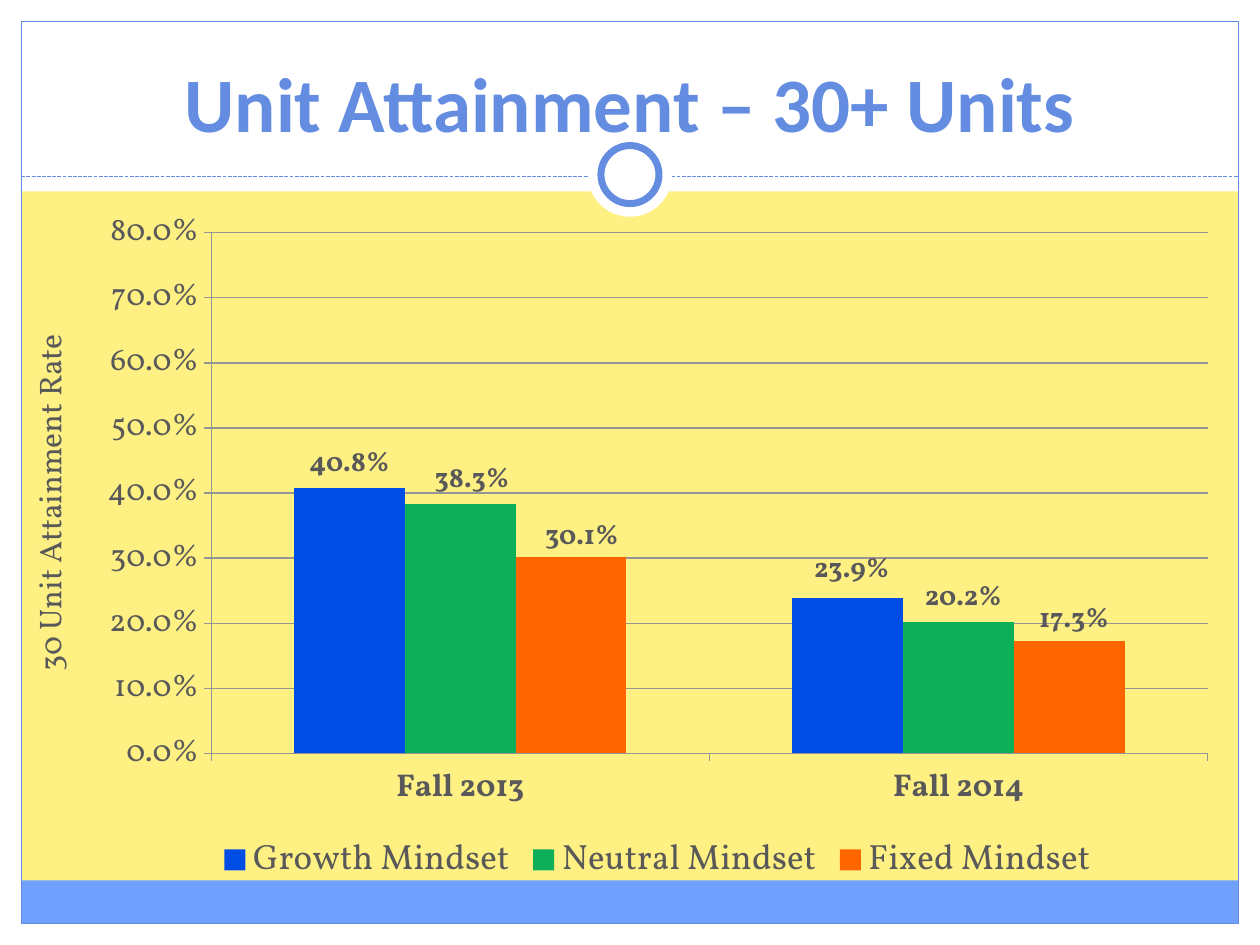
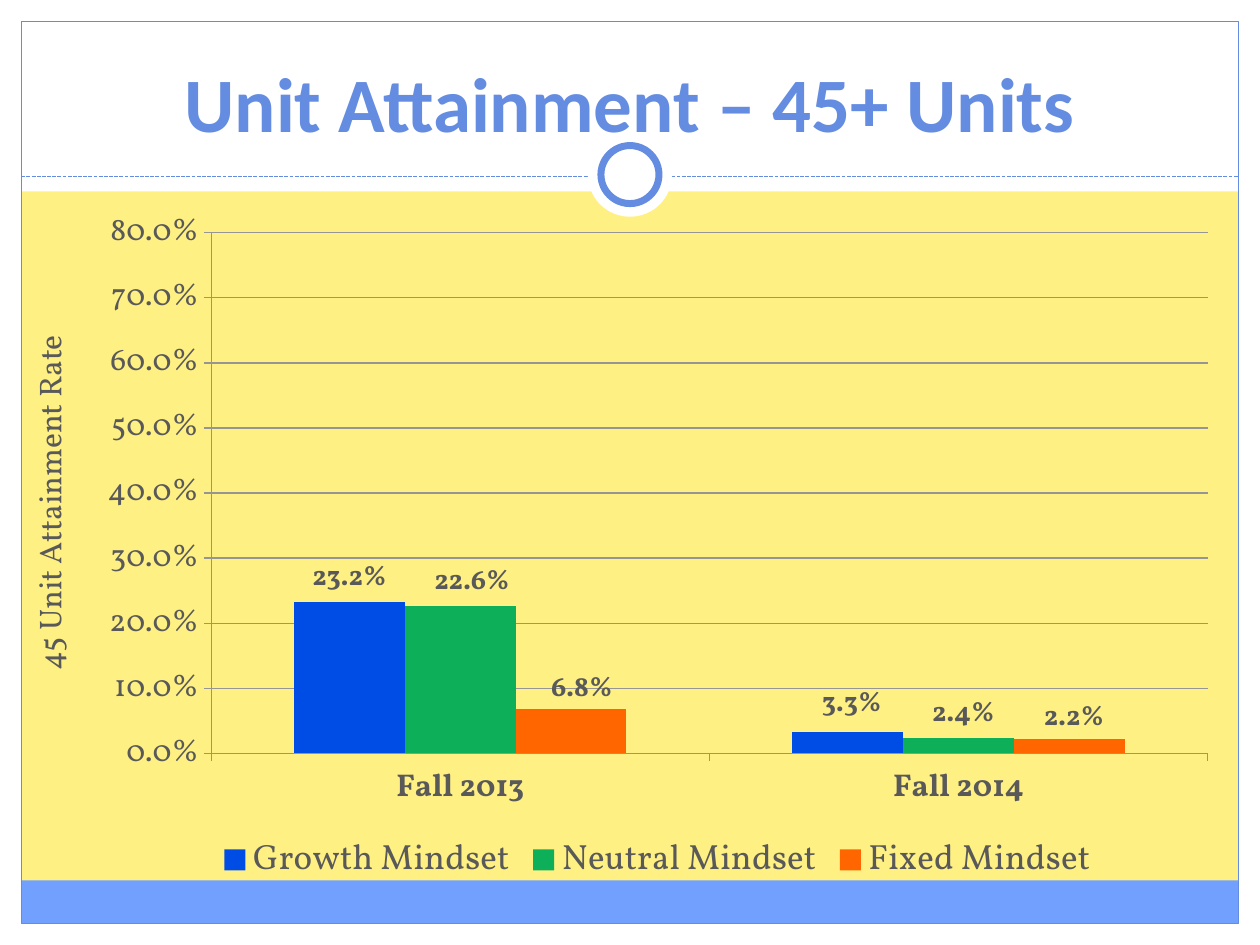
"""Build two slides that chart unit attainment by mindset."""
from lxml import etree
from pptx import Presentation
from pptx.chart.data import CategoryChartData
from pptx.dml.color import RGBColor
from pptx.enum.chart import XL_CHART_TYPE, XL_LABEL_POSITION, XL_LEGEND_POSITION, XL_TICK_MARK
from pptx.enum.dml import MSO_LINE
from pptx.enum.shapes import MSO_CONNECTOR, MSO_SHAPE
from pptx.enum.text import MSO_ANCHOR, MSO_AUTO_SIZE, PP_ALIGN
from pptx.oxml import parse_xml
from pptx.oxml.ns import nsdecls, qn
from pptx.util import Cm, Pt

RECT, OVAL = MSO_SHAPE.RECTANGLE, MSO_SHAPE.OVAL
STRAIGHT = MSO_CONNECTOR.STRAIGHT
COLUMNS = XL_CHART_TYPE.COLUMN_CLUSTERED
ABOVE = XL_LABEL_POSITION.OUTSIDE_END
BELOW = XL_LEGEND_POSITION.BOTTOM
OUT = XL_TICK_MARK.OUTSIDE
DASH = MSO_LINE.SQUARE_DOT
CENTER, BOTTOM = PP_ALIGN.CENTER, MSO_ANCHOR.BOTTOM
NO_FIT = MSO_AUTO_SIZE.NONE

YELLOW = RGBColor(0xFF, 0xF0, 0x84)
WHITE = RGBColor(0xFF, 0xFF, 0xFF)
SKY = RGBColor(0x71, 0xA0, 0xFF)
BLUE = RGBColor(0x64, 0x8D, 0xE1)
GREY = RGBColor(0x59, 0x59, 0x59)
RULE = RGBColor(0x95, 0x95, 0x95)
HEAD, BODY = "Calibri", "Vollkorn"

WIDTH, HEIGHT, EDGE = 25.4, 19.05, 0.43
CHART = (1.75, 4.24, 23.01, 13.74)
PLOT = {"x": 0.109, "y": 0.033, "w": 0.873, "h": 0.764}
PERCENT = "0.0%"
TERMS = ("Fall 2013", "Fall 2014")
GROUPS = {
    "Growth Mindset": RGBColor(0x00, 0x4D, 0xE6),
    "Neutral Mindset": RGBColor(0x0D, 0xAF, 0x58),
    "Fixed Mindset": RGBColor(0xFF, 0x66, 0x00),
}
SHIFTS = (
    {1: (0.08, -0.08)},
    {0: (0.24, 0), 1: (0.1, 0)},
    {0: (0.22, 0.08), 1: (0.1, 0.06)},
)
RATES = {
    30: ((0.408, 0.239), (0.383, 0.202), (0.301, 0.173)),
    45: ((0.232, 0.033), (0.226, 0.024), (0.068, 0.022)),
}


def style(font, name, size, color, bold=False):
    """Set face, size, colour and weight of a font."""
    font.name, font.size, font.bold = name, Pt(size), bold
    font.color.rgb = color


def add_block(slide, kind, box, fill=None, line=None, weight=0.75):
    """Add a flat shape with optional fill and line."""
    shape = slide.shapes.add_shape(kind, *map(Cm, box))
    shape.shadow.inherit = False
    if fill is None:
        shape.fill.background()
    else:
        shape.fill.solid()
        shape.fill.fore_color.rgb = fill
    if line is None:
        shape.line.fill.background()
    else:
        shape.line.color.rgb = line
        shape.line.width = Pt(weight)
    return shape


def add_disc(slide, size, **look):
    """Add a circle centred on the header rule."""
    box = (WIDTH / 2 - size / 2, 3.52 - size / 2, size, size)
    return add_block(slide, OVAL, box, **look)


def add_rule(slide):
    """Add the dashed line under the title."""
    rule = slide.shapes.add_connector(
        STRAIGHT, Cm(EDGE), Cm(3.56), Cm(WIDTH - EDGE), Cm(3.56))
    rule.line.color.rgb = BLUE
    rule.line.width = Pt(0.75)
    rule.line.dash_style = DASH
    etree.SubElement(rule.element.spPr, qn("a:effectLst"))
    return rule


def set_frame(slide):
    """Give the slide's layout its background, bands and ring."""
    layout = slide.slide_layout
    layout.background.fill.solid()
    layout.background.fill.fore_color.rgb = YELLOW
    for holder in list(layout.placeholders):
        if holder.placeholder_format.idx:
            layout.shapes.element.remove(holder.element)
    inner = WIDTH - 2 * EDGE
    bands = (
        (0, HEIGHT - EDGE, WIDTH, EDGE),
        (0, 0, WIDTH, 3.86),
        (0, 0, EDGE, HEIGHT),
        (WIDTH - EDGE, 0, EDGE, HEIGHT),
    )
    parts = [add_block(slide, RECT, band, WHITE) for band in bands]
    parts += [
        add_block(slide, RECT, (EDGE, 17.75, inner, 0.87), SKY),
        add_block(slide, RECT, (EDGE, EDGE, inner, HEIGHT - 2 * EDGE), line=BLUE),
        add_rule(slide),
        add_disc(slide, 1.7, fill=WHITE),
        add_disc(slide, 1.17, fill=WHITE, line=BLUE, weight=4),
    ]
    for part in parts:
        layout.shapes.element.append(part.element)


def set_title(slide, text):
    """Place and format the title."""
    title = slide.shapes.title
    title.left, title.top = Cm(0.64), Cm(-0.08)
    title.width, title.height = Cm(24.13), Cm(3.18)
    frame = title.text_frame
    frame.text = text
    frame.auto_size, frame.vertical_anchor = NO_FIT, BOTTOM
    frame.paragraphs[0].alignment = CENTER
    style(frame.paragraphs[0].runs[0].font, HEAD, 44, BLUE, True)


def add_side(slide, text):
    """Add the upright caption of the value axis."""
    box = slide.shapes.add_textbox(Cm(0.48), Cm(5.59), Cm(1.27), Cm(9.09))
    frame = box.text_frame
    frame.text = text
    frame.word_wrap = True
    box.element.txBody.bodyPr.set("vert", "vert270")
    frame.paragraphs[0].alignment = CENTER
    style(frame.paragraphs[0].runs[0].font, BODY, 18, GREY)


def make_spot(modes, spots):
    """Return a manual chart layout element."""
    items = "".join(f'<c:{tag} val="{val}"/>' for tag, val in (modes | spots).items())
    return parse_xml(f'<c:layout {nsdecls("c")}><c:manualLayout>{items}'
                     '</c:manualLayout></c:layout>')


def set_axes(chart):
    """Format both axes and the grid."""
    rates, terms = chart.value_axis, chart.category_axis
    rates.minimum_scale, rates.maximum_scale, rates.major_unit = 0, 0.8, 0.1
    rates.tick_labels.number_format = PERCENT
    rates.tick_labels.number_format_is_linked = False
    rates.major_gridlines.format.line.color.rgb = RULE
    rates.major_gridlines.format.line.width = Pt(0.75)
    for axis in (rates, terms):
        axis.major_tick_mark = OUT
        axis.format.line.color.rgb = RULE
        axis.format.line.width = Pt(0.75)
        style(axis.tick_labels.font, BODY, 18, GREY, axis is terms)


def set_bars(bars, color, shifts):
    """Colour one series, label it and nudge its labels."""
    bars.format.fill.solid()
    bars.format.fill.fore_color.rgb = color
    bars.invert_if_negative = False
    labels = bars.data_labels
    labels.show_value, labels.position = True, ABOVE
    labels.number_format, labels.number_format_is_linked = PERCENT, False
    style(labels.font, BODY, 16, GREY, True)
    for spot, (right, down) in shifts.items():
        label = bars.points[spot].data_label
        style(label.font, BODY, 16, GREY, True)
        label.position = ABOVE
        move = {"x": round(right / CHART[2], 4), "y": round(down / CHART[3], 4)}
        idx = bars.data_labels._element.xpath(f'c:dLbl/c:idx[@val="{spot}"]')[0]
        idx.addnext(make_spot({}, move))


def add_bars(slide, rates):
    """Add the clustered column chart."""
    data = CategoryChartData(number_format=PERCENT)
    data.categories = TERMS
    for name, vals in zip(GROUPS, rates):
        data.add_series(name, vals)
    chart = slide.shapes.add_chart(COLUMNS, *map(Cm, CHART), data).chart
    style(chart.font, BODY, 18, GREY)
    chart.has_title = False
    chart.has_legend = True
    chart.legend.position = BELOW
    chart.legend.include_in_layout = False
    style(chart.legend.font, BODY, 20, GREY)
    set_axes(chart)
    plot = chart.plots[0]
    plot.gap_width, plot.overlap, plot.vary_by_categories = 150, 0, False
    for bars, color, shifts in zip(plot.series, GROUPS.values(), SHIFTS):
        set_bars(bars, color, shifts)
    area = chart.element.chart.plotArea
    for old in area.findall(qn("c:layout")):
        area.remove(old)
    modes = {"layoutTarget": "inner", "xMode": "edge", "yMode": "edge"}
    area.insert(0, make_spot(modes, PLOT))


def main():
    """Build and save the deck."""
    deck = Presentation()
    deck.slide_width, deck.slide_height = Cm(WIDTH), Cm(HEIGHT)
    layout = deck.slide_layouts[5]
    for units, rates in RATES.items():
        slide = deck.slides.add_slide(layout)
        if len(deck.slides) == 1:
            set_frame(slide)
        set_title(slide, f"Unit Attainment – {units}+ Units")
        add_side(slide, f"{units} Unit Attainment Rate")
        add_bars(slide, rates)
    deck.save("out.pptx")


if __name__ == "__main__":
    main()
